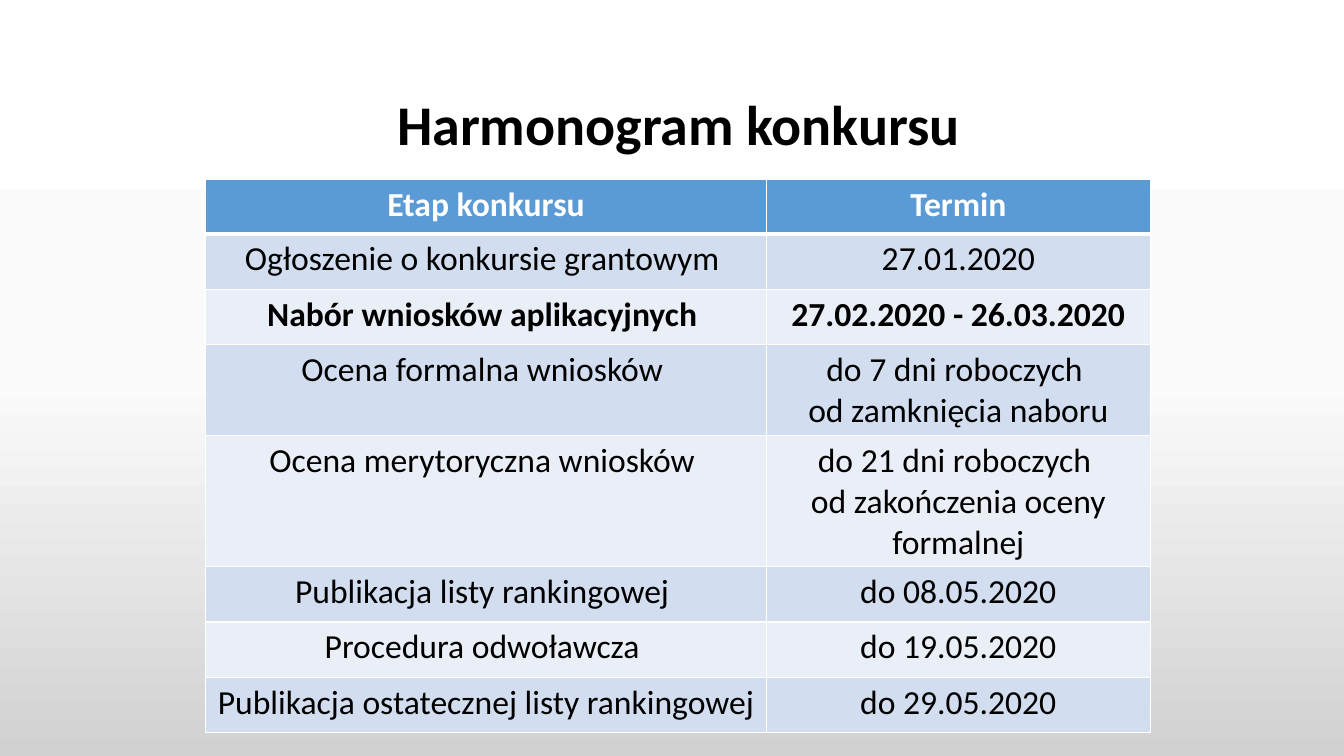
from copy import deepcopy

from lxml.etree import SubElement
from pptx import Presentation
from pptx.dml.color import RGBColor
from pptx.enum.text import MSO_ANCHOR, PP_ALIGN
from pptx.oxml.ns import qn
from pptx.util import Inches, Pt


def rgb(value):
    return RGBColor.from_string(value)


def format_text(tf, size, color, bold):
    for p in tf.paragraphs:
        p.alignment = PP_ALIGN.CENTER
        for r in p.runs:
            r.font.name = "Calibri"
            r.font.size = Pt(size)
            r.font.bold = bold
            r.font.color.rgb = rgb(color)


prs = Presentation()
prs.slide_width = Inches(13.33)
prs.slide_height = Inches(7.5)
s = prs.slides.add_slide(prs.slide_layouts[6])

fill = s.background.fill
fill.gradient()
fill.gradient_angle = 270
stop_list = s.element.find(".//" + qn("a:gsLst"))
stop_list.append(deepcopy(stop_list[0]))
gradient = [(0, "FFFFFF"), (0.5, "FBFBFB"), (1, "D1D1D1")]
for stop, (position, color) in zip(fill.gradient_stops, gradient):
    stop.position = position
    stop.color.rgb = rgb(color)

title = s.shapes.add_textbox(Inches(2.23), Inches(0.84), Inches(9), Inches(0.84))
tf = title.text_frame
tf.word_wrap = True
tf.vertical_anchor = MSO_ANCHOR.MIDDLE
tf.text = "Harmonogram konkursu"
tf.paragraphs[0].line_spacing = 0.9
format_text(tf, 40, "000000", True)

schedule = [
    (0.54, "Etap konkursu", "Termin"),
    (0.55, "Ogłoszenie o konkursie grantowym ", "27.01.2020"),
    (0.55, "Nabór wniosków aplikacyjnych ", "27.02.2020 - 26.03.2020"),
    (0.79, "Ocena formalna wniosków ", "do 7 dni roboczych \vod zamknięcia naboru"),
    (0.95, "Ocena merytoryczna wniosków ", "do 21 dni roboczych \vod zakończenia oceny formalnej"),
    (0.55, "Publikacja listy rankingowej ", "do 08.05.2020"),
    (0.55, "Procedura odwoławcza ", "do 19.05.2020"),
    (0.55, "Publikacja ostatecznej listy rankingowej ", "do 29.05.2020"),
]
HEADER, SUBMISSION = 0, 2

table = s.shapes.add_table(
    len(schedule), 2, Inches(2.04), Inches(1.78), Inches(9.37), Inches(5.5)
).table
for column, width in zip(table.columns, (5.56, 3.81)):
    column.width = Inches(width)

for i, (height, *texts) in enumerate(schedule):
    table.rows[i].height = Inches(height)
    background = "5B9BD5" if i == HEADER else ("EAEFF7", "D2DEEF")[i % 2]
    color = "FFFFFF" if i == HEADER else "000000"
    for j, text in enumerate(texts):
        cell = table.cell(i, j)
        cell.text_frame.text = text
        format_text(cell.text_frame, 24, color, i in (HEADER, SUBMISSION))
        tc_pr = cell._tc.get_or_add_tcPr()
        for side in ("lnL", "lnR", "lnT", "lnB"):
            thick = (i, side) in ((HEADER, "lnB"), (HEADER + 1, "lnT"))
            line = SubElement(tc_pr, qn("a:" + side), w=str(Pt(3 if thick else 1)))
            solid = SubElement(line, qn("a:solidFill"))
            SubElement(solid, qn("a:srgbClr"), val="FFFFFF")
        cell.fill.solid()
        cell.fill.fore_color.rgb = rgb(background)

prs.save("out.pptx")
